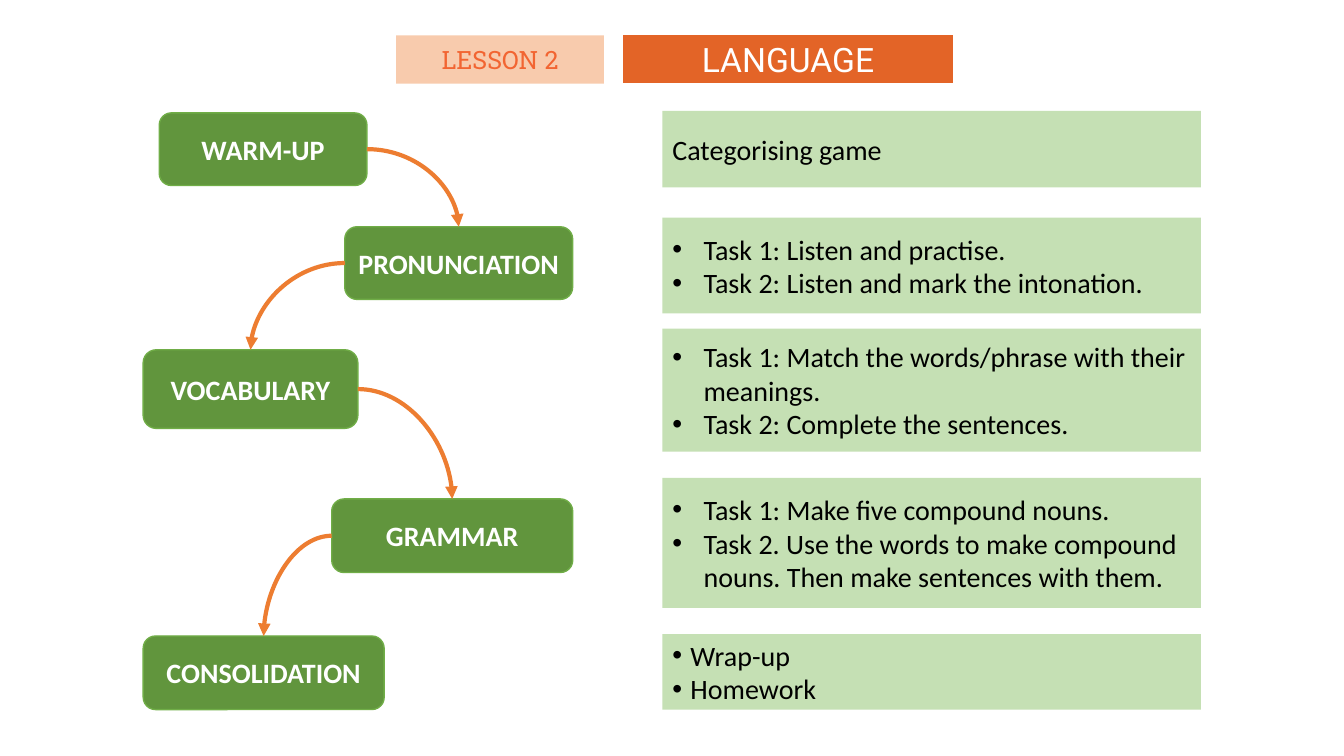
from dataclasses import dataclass
from itertools import pairwise

from lxml.etree import SubElement
from pptx import Presentation
from pptx.dml.color import RGBColor
from pptx.enum.shapes import MSO_CONNECTOR, MSO_SHAPE as Preset
from pptx.enum.text import MSO_ANCHOR, PP_ALIGN as Align
from pptx.oxml.ns import qn
from pptx.shapes.autoshape import Shape
from pptx.shapes.connector import Connector
from pptx.shapes.shapetree import SlideShapes
from pptx.util import Emu, Pt

EMU_PER_PX = 9144  # 100 px to the inch
TOP, LEFT, RIGHT = 0, 1, 3  # connection sites


def px(length: int) -> Emu:
    return Emu(length * EMU_PER_PX)


@dataclass(frozen=True)
class TextStyle:
    font: str
    size: int
    color: str
    bold: bool = False


@dataclass(frozen=True)
class BoxStyle:
    preset: Preset
    fill: str
    text: TextStyle
    align: Align = Align.CENTER
    line: str | None = None
    line_width: float = 0


@dataclass(frozen=True)
class Theme:
    lesson: BoxStyle = BoxStyle(
        Preset.RECTANGLE, "F8CBAD", TextStyle("Roboto Slab", 18, "F26532"))
    title: BoxStyle = BoxStyle(
        Preset.RECTANGLE, "E36427", TextStyle("Roboto", 24, "FFFFFF"),
        line="FFFFFF", line_width=1.5)
    stage: BoxStyle = BoxStyle(
        Preset.ROUNDED_RECTANGLE, "61953D",
        TextStyle("Calibri", 20, "FFFFFF", bold=True),
        line="70AD47", line_width=1)
    tasks: BoxStyle = BoxStyle(
        Preset.RECTANGLE, "C5E0B4", TextStyle("Calibri", 20, "000000"), Align.LEFT)
    arrow: str = "ED7D31"
    arrow_width: int = 3


@dataclass(frozen=True)
class Box:
    left: int
    top: int
    width: int
    height: int


@dataclass(frozen=True)
class Stage:
    name: str
    box: Box
    tasks: tuple[str, ...]
    tasks_top: int
    tasks_height: int
    indent: int = 0  # hanging indent of the bullets, 0 for plain text


THEME = Theme()
TASKS_LEFT, TASKS_WIDTH = 657, 534

STAGES = (
    Stage("WARM-UP", Box(158, 112, 206, 72), ("Categorising game",), 110, 76),
    Stage("PRONUNCIATION", Box(342, 225, 226, 72),
          ("Task 1: Listen and practise.",
           "Task 2: Listen and mark the intonation."), 216, 95, 31),
    Stage("VOCABULARY", Box(142, 347, 213, 78),
          ("Task 1: Match the words/phrase with their meanings.",
           "Task 2: Complete the sentences."), 326, 122, 31),
    Stage("GRAMMAR", Box(329, 495, 239, 73),
          ("Task 1: Make five compound nouns.",
           "Task 2. Use the words to make compound nouns. "
           "Then make sentences with them."), 474, 129, 31),
    Stage("CONSOLIDATION", Box(142, 631, 239, 73),
          ("Wrap-up", "Homework"), 629, 75, 18),
)


def add_bullet(paragraph, indent: int) -> None:
    properties = paragraph._p.get_or_add_pPr()
    properties.set("marL", str(px(indent)))
    properties.set("indent", str(-px(indent)))
    SubElement(properties, qn("a:buFont")).set("typeface", "Arial")
    SubElement(properties, qn("a:buChar")).set("char", "•")


def add_box(shapes: SlideShapes, box: Box, style: BoxStyle,
            lines: tuple[str, ...], indent: int = 0) -> Shape:
    panel = shapes.add_shape(style.preset, px(box.left), px(box.top),
                             px(box.width), px(box.height))
    panel.shadow.inherit = False
    panel.fill.solid()
    panel.fill.fore_color.rgb = RGBColor.from_string(style.fill)
    if style.line:
        panel.line.color.rgb = RGBColor.from_string(style.line)
        panel.line.width = Pt(style.line_width)
    else:
        panel.line.fill.background()

    frame = panel.text_frame
    frame.word_wrap = True
    frame.vertical_anchor = MSO_ANCHOR.MIDDLE
    font_format = {"name": style.text.font, "size": Pt(style.text.size),
                   "bold": style.text.bold}
    for number, line in enumerate(lines):
        paragraph = frame.add_paragraph() if number else frame.paragraphs[0]
        paragraph.alignment = style.align
        if indent:
            add_bullet(paragraph, indent)
        run = paragraph.add_run()
        run.text = line
        for attribute, value in font_format.items():
            setattr(run.font, attribute, value)
        run.font.color.rgb = RGBColor.from_string(style.text.color)
    return panel


def add_arrow(shapes: SlideShapes, source: Shape, target: Shape) -> Connector:
    """Curve from the side of one stage to the top of the next."""
    side = RIGHT if target.left < source.left + source.width < target.left + target.width else LEFT
    arrow = shapes.add_connector(MSO_CONNECTOR.CURVE, 0, 0, 0, 0)
    arrow.begin_connect(source, side)
    arrow.end_connect(target, TOP)
    arrow.line.color.rgb = RGBColor.from_string(THEME.arrow)
    arrow.line.width = Pt(THEME.arrow_width)
    properties = arrow._element.spPr
    properties.find(qn("a:prstGeom")).set("prst", "curvedConnector2")
    SubElement(properties.find(qn("a:ln")), qn("a:tailEnd")).set("type", "triangle")
    SubElement(properties, qn("a:effectLst"))
    return arrow


def main() -> None:
    deck = Presentation()
    deck.slide_width, deck.slide_height = px(1333), px(750)
    shapes = deck.slides.add_slide(deck.slide_layouts[6]).shapes

    # Heading
    add_box(shapes, Box(393, 35, 206, 48), THEME.lesson, ("LESSON 2",))
    add_box(shapes, Box(617, 34, 329, 49), THEME.title, ("LANGUAGE",))

    # Lesson stages and their tasks
    stage_boxes = []
    for stage in STAGES:
        stage_boxes.append(add_box(shapes, stage.box, THEME.stage, (stage.name,)))
        tasks_box = Box(TASKS_LEFT, stage.tasks_top, TASKS_WIDTH, stage.tasks_height)
        add_box(shapes, tasks_box, THEME.tasks, stage.tasks, stage.indent)

    # Arrows from stage to stage
    for source, target in pairwise(stage_boxes):
        add_arrow(shapes, source, target)

    deck.save("out.pptx")


if __name__ == "__main__":
    main()
